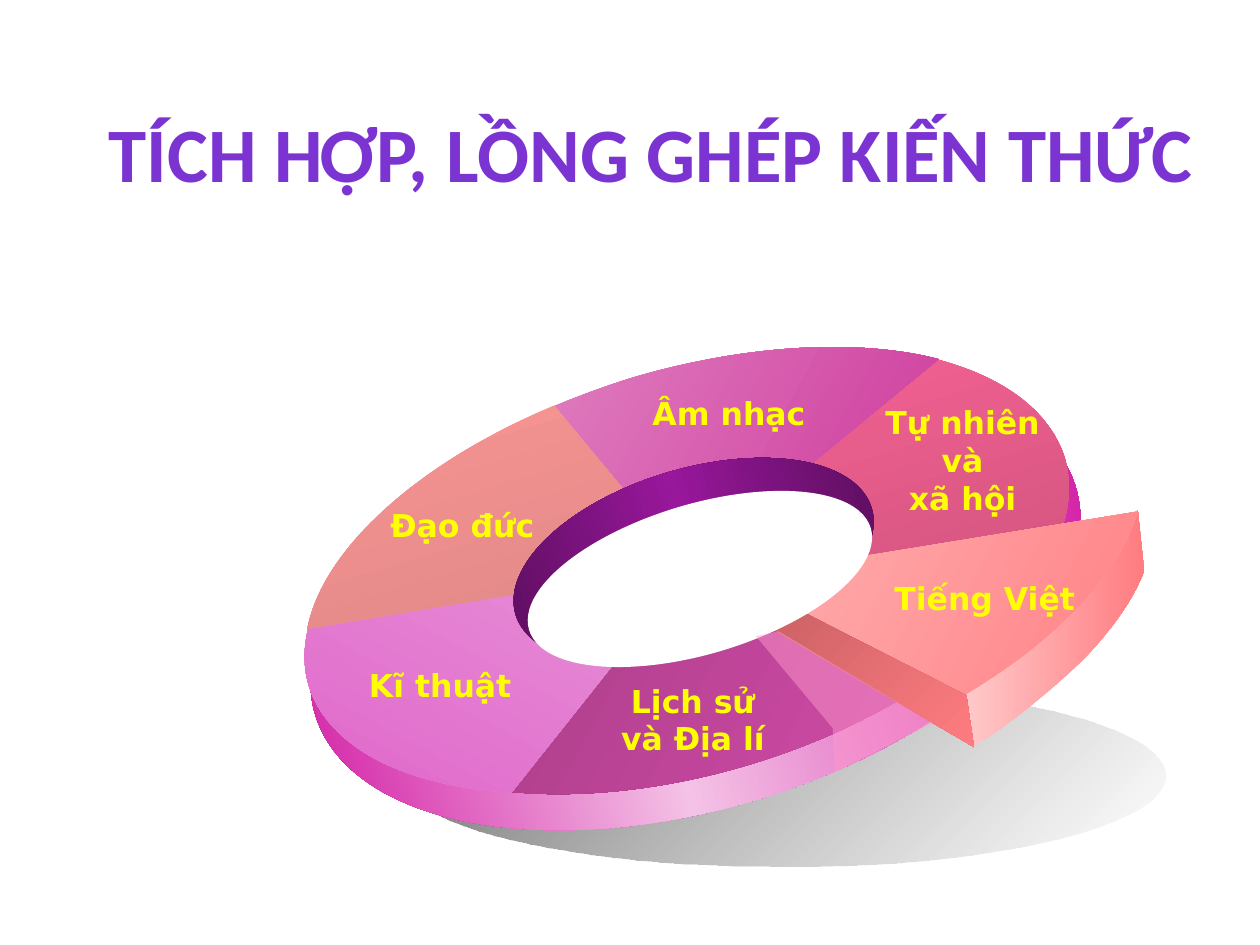
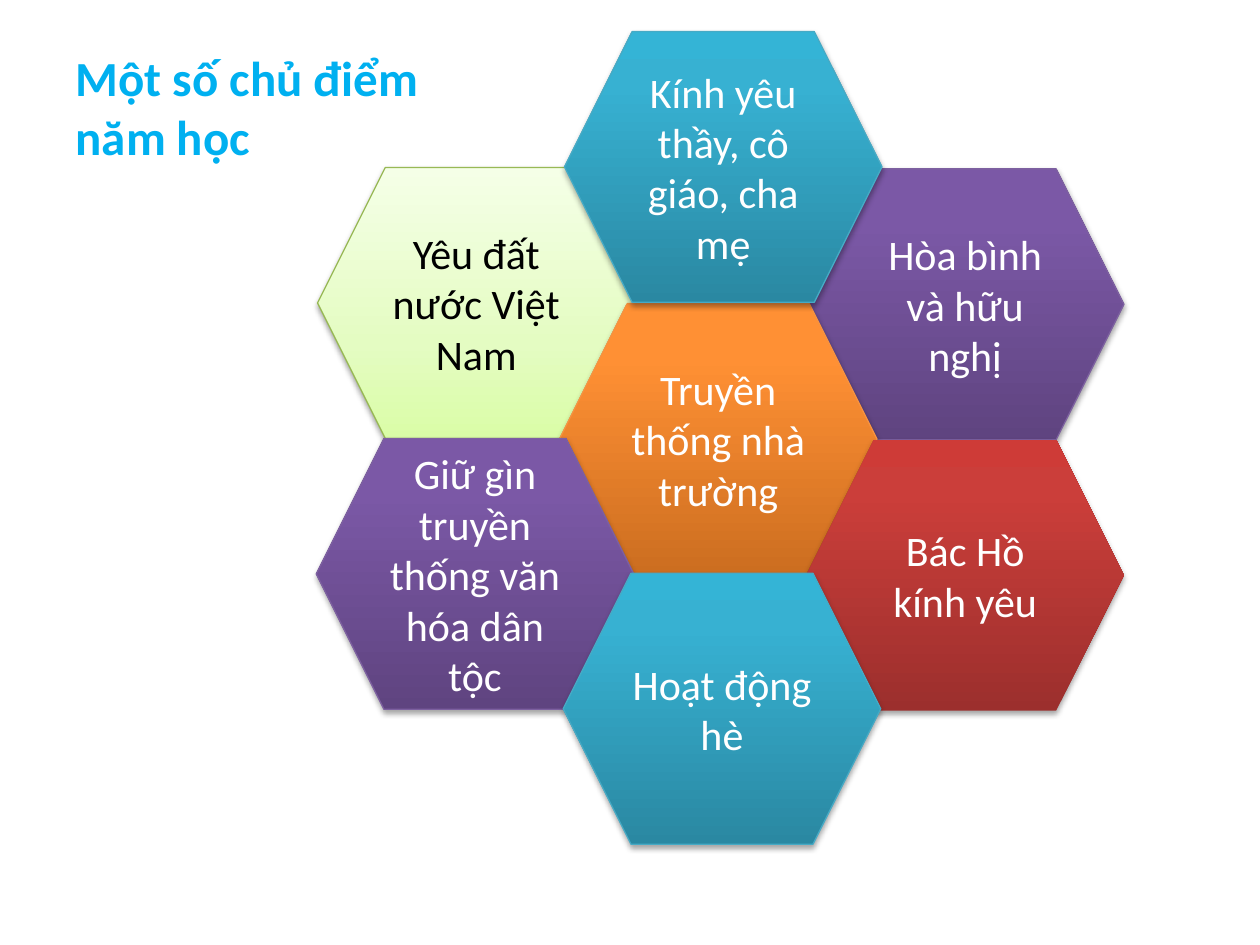
import math

import lxml.etree
import pptx
import pptx.dml.color
import pptx.enum.shapes
import pptx.enum.text
import pptx.oxml
import pptx.oxml.ns
import pptx.util

PX = 9144  # 100 px to the inch
TILT = 343.4
CURVE_STEPS = 16

COLOURS = {"white": "FFFFFF", "black": "000000", "label": "FFFF00",
           "heading": "00B0F0", "title line": "5E457C", "gap": "FF99CC"}

# Each gradient: angle in degrees, then (position, colour[, opacity]) stops
GRADIENTS = {
    "title": (90, [(0, "3D1B67"), (43, "7B34D2"), (48, "7330C4"), (100, "3D1B67")]),
    "floor": (45, [(0, "292929", 70), (100, "FFFFFF", 50)]),
    "rim": (0, [(0, "CC0099"), (44, "F4C2E6"), (100, "CC0099")]),
    "disc": (45, [(0, "8E3472"), (100, "E151B4")]),
    "hole": (0, [(0, "540D56"), (50, "98179B"), (100, "540D56")]),
    "nature": (90, [(0, "FA6496"), (100, "CC527B")]),
    "craft": (135, [(0, "E99ADB"), (100, "DF62C8")]),
    "music": (45, [(0, "E080C0"), (100, "CC3399")]),
    "ethics": (90, [(0, "FC9794"), (100, "DA8585")]),
    "slice edge": (0, [(0, "FFC8C9"), (100, "FF7C80")]),
    "slice top": (45, [(0, "FFB3B4"), (100, "FF7C80")]),
    "slice side": (45, [(0, "C05C60"), (100, "FF7C80")]),
    "purple": (270, [(0, "5F4480"), (80, "7B58A6"), (100, "7C57A8")]),
    "green": (270, [(0, "DAFDA7"), (35, "E4FCC2"), (100, "F5FFE7")]),
    "orange": (270, [(0, "CC6E20"), (80, "FF9034"), (100, "FF9136")]),
    "red": (270, [(0, "9C2F2D"), (80, "CB3E3A"), (100, "CE3B37")]),
    "blue": (270, [(0, "2A88A2"), (80, "37B1D2"), (100, "34B4D6")]),
}
HEXAGON_LINES = {"purple": "7D60A0", "green": "98B955", "orange": "F69240",
                 "blue": "46AAC5"}

TITLE = "TÍCH HỢP, LỒNG GHÉP KIẾN THỨC"
TITLE_BOX = (67, 58, 900, 125)
HEADING = "Một số chủ điểm \vnăm học"
HEADING_BOX = (50, 33, 900, 637)

TITLE_FONT = {"name": "Calibri", "size": pptx.util.Pt(44), "bold": True}
HEADING_FONT = {"name": "Calibri", "size": pptx.util.Pt(28), "bold": True}
LABEL_FONT = {"name": "DejaVu Sans", "size": pptx.util.Pt(18), "bold": True}
HEXAGON_FONT = {"name": "Calibri", "size": pptx.util.Pt(24), "bold": False}

# Ring parts from back to front: ellipses are (fill, rotation, box);
# outlines are (fill, rotation, points), where six numbers make a curve.
ELLIPSE, OUTLINE = "ellipse", "outline"
RING = [
    (ELLIPSE, "floor", 0, (317, 543, 608, 145)),
    (ELLIPSE, "rim", TILT, (237, 312, 630, 330)),
    (ELLIPSE, "disc", TILT, (243, 294, 609, 320)),
    (OUTLINE, "nature", TILT, [(739, 284), (796, 298, 833, 326, 845, 363),
                               (851, 384, 849, 406, 839, 430), (546, 452)]),
    (OUTLINE, "craft", TILT, [(247, 490), (241, 509, 240, 527, 245, 544),
                              (260, 592, 319, 624, 406, 629), (546, 453)]),
    (OUTLINE, "music", TILT, [(436, 324), (457, 315, 479, 307, 501, 300),
                              (589, 274, 679, 268, 745, 285), (546, 449)]),
    (OUTLINE, "ethics", TILT, [(440, 322), (332, 367, 256, 436, 244, 499),
                               (545, 449)]),
    (ELLIPSE, "hole", TILT, (403, 372, 295, 147)),
    (OUTLINE, "slice edge", 0, [(767, 551), (903, 405), (908, 453),
                                (901, 473, 884, 498, 861, 522),
                                (838, 545, 787, 587, 771, 592),
                                (768, 580, 767, 551, 767, 551)]),
    (OUTLINE, "slice top", 342.3, [(903, 406), (888, 456, 837, 510, 761, 554),
                                   (577, 459)]),
    (OUTLINE, "slice side", 0, [(767, 552), (773, 593), (592, 487), (581, 457)]),
    (ELLIPSE, "white", TILT, (414, 400, 283, 119)),
    (OUTLINE, "gap", 0, [(600, 505), (661, 578), (662, 613), (740, 574),
                         (618, 501)]),
]
LABELS = [
    (["Đạo đức"], (300, 397, 137, 40), False),
    (["Âm nhạc"], (508, 308, 145, 40), False),
    (["Tự nhiên", "và", "xã hội"], (691, 315, 146, 101), False),
    (["Tiếng Việt"], (700, 455, 165, 40), False),
    (["Lịch sử và Địa lí"], (475, 536, 150, 71), True),
    (["Kĩ thuật"], (283, 524, 135, 40), False),
]
HEXAGON_SIZE = (252, 215)
HEXAGONS = [
    ("Hòa bình và hữu nghị", "purple", (640, 134)),
    ("Yêu đất nước Việt Nam", "green", (252, 133)),
    ("Truyền thống nhà trường", "orange", (444, 241)),
    ("Bác Hồ kính yêu", "red", (640, 349)),
    ("Giữ gìn truyền thống văn hóa dân tộc", "purple", (251, 348)),
    ("Hoạt động hè", "blue", (447, 455)),
    ("Kính yêu thầy, cô giáo, cha mẹ", "blue", (448, 25)),
]


def emu(lengths):
    return [round(length * PX) for length in lengths]


def rgb(name):
    return pptx.dml.color.RGBColor.from_string(COLOURS.get(name, name))


def element(parent, tag, **attributes):
    child = lxml.etree.SubElement(parent, pptx.oxml.ns.qn(tag))
    for name, value in attributes.items():
        child.set(name, str(value))
    return child


def clear(parent):
    for child in list(parent):
        parent.remove(child)


def add_colour(parent, colour, opacity=100):
    node = element(parent, "a:srgbClr", val=colour)
    if opacity < 100:
        element(node, "a:alpha", val=opacity * 1000)


def paint(fill, properties, name):
    """Fill with a named gradient or colour; properties is the XML parent."""
    if name not in GRADIENTS:
        fill.solid()
        fill.fore_color.rgb = rgb(name)
        return
    angle, stops = GRADIENTS[name]
    fill.gradient()
    gradient = properties.find(pptx.oxml.ns.qn("a:gradFill"))
    clear(gradient)
    gradient.set("rotWithShape", "1")
    stop_list = element(gradient, "a:gsLst")
    for position, *colour in stops:
        add_colour(element(stop_list, "a:gs", pos=position * 1000), *colour)
    element(gradient, "a:lin", ang=angle * 60000, scaled=1)


def format_font(font, values, colour=None):
    for name, value in values.items():
        setattr(font, name, value)
    if colour:
        font.color.rgb = rgb(colour)


def place(shape, box):
    for name, value in zip(("left", "top", "width", "height"), emu(box)):
        setattr(shape, name, value)


def turn(point, degrees):
    x, y = point
    cosine, sine = math.cos(math.radians(degrees)), math.sin(math.radians(degrees))
    return x * cosine - y * sine, x * sine + y * cosine


def trace(segments):
    """Sample lines and cubic curves, to find how far the outline reaches."""
    points = []
    for segment in segments:
        if len(segment) == 1:
            points += segment
            continue
        knots = [points[-1], *segment]
        for step in range(1, CURVE_STEPS + 1):
            t = step / CURVE_STEPS
            weights = [math.comb(3, i) * t**i * (1 - t)**(3 - i) for i in range(4)]
            points.append(tuple(sum(w * knot[axis] for w, knot in zip(weights, knots))
                                for axis in (0, 1)))
    return points


def add_outline(shapes, outline, rotation):
    """Draw upright about the true centre, so that rotation lands it in place."""
    upright = [[turn(part[i:i + 2], -rotation) for i in range(0, len(part), 2)]
               for part in outline]
    reach = trace(upright)
    middle = [(min(axis) + max(axis)) / 2 for axis in zip(*reach)]
    centre = turn(middle, rotation)

    def moved(point):
        return emu(p - m + c for p, m, c in zip(point, middle, centre))

    corners = [moved(point) for point in reach]
    builder = shapes.build_freeform(*corners[0], scale=1.0)
    builder.add_line_segments(corners[1:], close=True)
    shape = builder.convert_to_shape()

    curve = shape._element.spPr.find(".//" + pptx.oxml.ns.qn("a:path"))
    clear(curve)
    for number, segment in enumerate(upright):
        tag = "a:cubicBezTo" if len(segment) == 3 else "a:lnTo"
        step = element(curve, tag if number else "a:moveTo")
        for point in segment:
            x, y = moved(point)
            element(step, "a:pt", x=x - shape.left, y=y - shape.top)
    element(curve, "a:close")
    return shape


def add_ring(shapes):
    for kind, fill, rotation, geometry in RING:
        if kind == ELLIPSE:
            shape = shapes.add_shape(pptx.enum.shapes.MSO_SHAPE.OVAL, *emu(geometry))
        else:
            shape = add_outline(shapes, geometry, rotation)
        shape.rotation = rotation
        shape.shadow.inherit = False
        shape.line.fill.background()
        paint(shape.fill, shape._element.spPr, fill)
        if fill == "gap":
            colour = shape._element.spPr.find(".//" + pptx.oxml.ns.qn("a:srgbClr"))
            element(colour, "a:alpha", val=49000)


def add_label(shapes, lines, box, wrap):
    frame = shapes.add_textbox(*emu(box)).text_frame
    frame.word_wrap = wrap
    frame.auto_size = pptx.enum.text.MSO_AUTO_SIZE.SHAPE_TO_FIT_TEXT
    frame.text = "\n".join(lines)
    for para in frame.paragraphs:
        if wrap or len(lines) > 1:
            para.alignment = pptx.enum.text.PP_ALIGN.CENTER
        format_font(para.runs[0].font, LABEL_FONT, "label")


def add_hexagon(shapes, text, colour, corner):
    hexagon = shapes.add_shape(pptx.enum.shapes.MSO_SHAPE.HEXAGON,
                               *emu(corner + HEXAGON_SIZE))
    properties = hexagon._element.spPr
    paint(hexagon.fill, properties, colour)
    if colour in HEXAGON_LINES:
        hexagon.line.color.rgb = rgb(HEXAGON_LINES[colour])
        hexagon.line.width = pptx.util.Pt(0.75)
    else:
        hexagon.line.fill.background()
    hexagon.shadow.inherit = False
    effects = properties.find(pptx.oxml.ns.qn("a:effectLst"))
    distance, opacity = (20000, 38) if colour == "green" else (23000, 35)
    shadow = element(effects, "a:outerShdw", blurRad=40000, dist=distance,
                     dir=90 * 60000, rotWithShape=0)
    add_colour(shadow, COLOURS["black"], opacity)
    frame = hexagon.text_frame
    frame.word_wrap = True
    frame.vertical_anchor = pptx.enum.text.MSO_ANCHOR.MIDDLE
    para = frame.paragraphs[0]
    para.text = text
    para.alignment = pptx.enum.text.PP_ALIGN.CENTER
    format_font(para.runs[0].font, HEXAGON_FONT,
                "black" if colour == "green" else "white")


def build_ring_slide(deck):
    page = deck.slides.add_slide(deck.slide_layouts.get_by_name("Title Only"))
    title = page.shapes.title
    place(title, TITLE_BOX)
    title.text_frame.vertical_anchor = pptx.enum.text.MSO_ANCHOR.MIDDLE
    para = title.text_frame.paragraphs[0]
    para.alignment = pptx.enum.text.PP_ALIGN.CENTER
    span = para.add_run()
    span.text = TITLE
    format_font(span.font, TITLE_FONT)
    properties = span._r.get_or_add_rPr()
    paint(span.font.fill, properties, "title")
    line = element(properties, "a:ln", w=9000)
    add_colour(element(line, "a:solidFill"), COLOURS["title line"])
    properties.insert(0, line)
    add_ring(page.shapes)
    for label in LABELS:
        add_label(page.shapes, *label)


def build_hexagon_slide(deck):
    page = deck.slides.add_slide(deck.slide_layouts.get_by_name("Title and Content"))
    title = page.shapes.title._element
    title.getparent().remove(title)
    body = page.placeholders[1]
    place(body, HEADING_BOX)
    para = body.text_frame.paragraphs[0]
    para.text = HEADING
    properties = para._p.get_or_add_pPr()
    for name in ("marL", "indent"):
        properties.set(name, "0")
    element(properties, "a:buNone")
    for span in para.runs:
        format_font(span.font, HEADING_FONT, "heading")
    group = page.shapes.add_group_shape()
    for hexagon in HEXAGONS:
        add_hexagon(group.shapes, *hexagon)


def main():
    deck = pptx.Presentation()
    deck.slide_width, deck.slide_height = emu((1000, 750))
    build_ring_slide(deck)
    build_hexagon_slide(deck)
    deck.save("out.pptx")


if __name__ == "__main__":
    main()
